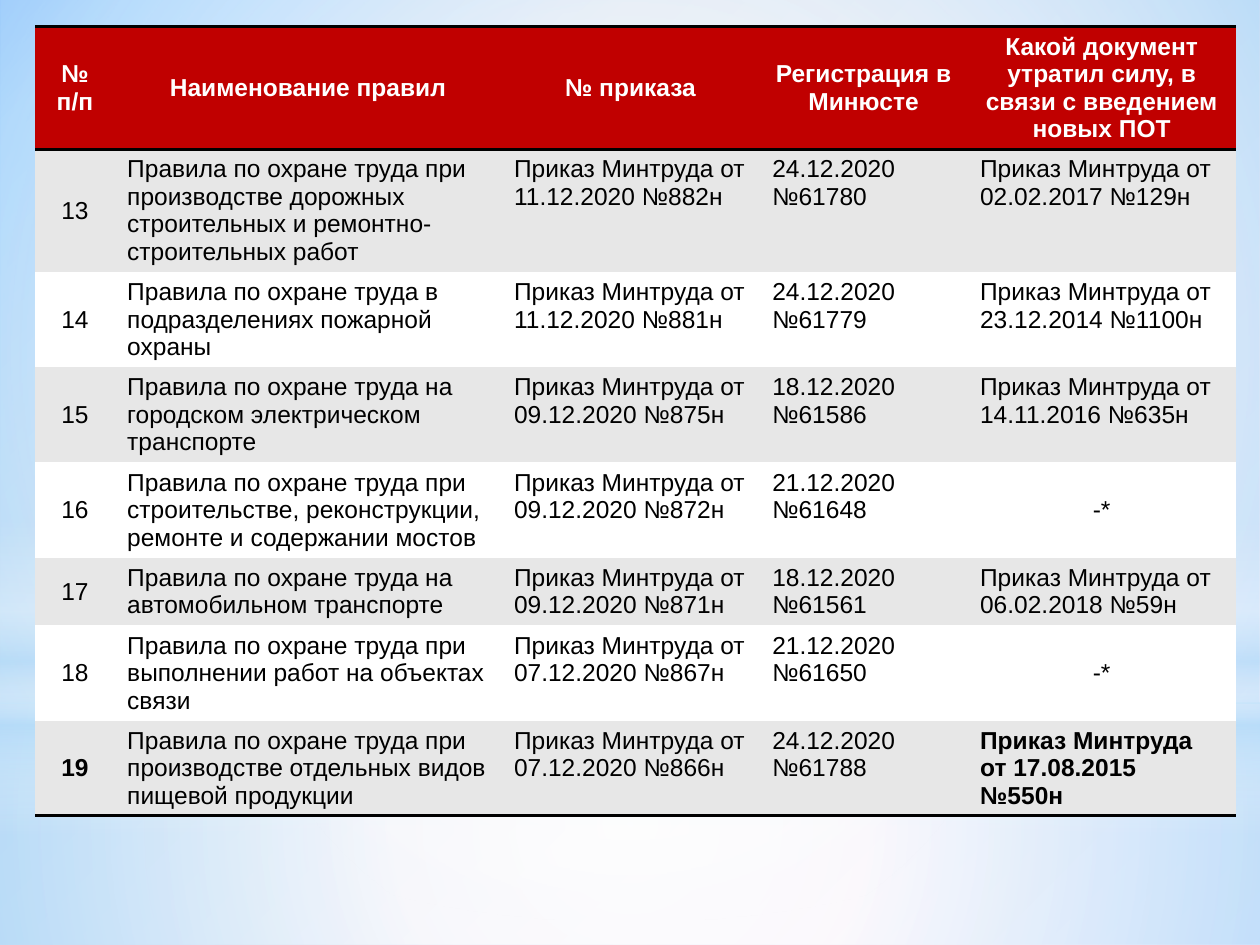
from lxml import etree
from pptx import Presentation
from pptx import util as u
from pptx.dml.color import RGBColor
from pptx.enum import shapes, text
from pptx.oxml import ns

WHITE = RGBColor(0xFF, 0xFF, 0xFF)
BLACK = RGBColor(0, 0, 0)
RED = RGBColor(0xC0, 0, 0)
GREY = RGBColor(0xE7, 0xE7, 0xE7)
SKY = RGBColor(0xB4, 0xDC, 0xFA)
BLUE = RGBColor(0x5E, 0x9E, 0xFF)
LIGHT_BLUE = RGBColor(0x85, 0xC2, 0xFF)
MIST = RGBColor(0xC4, 0xD6, 0xEB)
PINK = RGBColor(0xFF, 0xEB, 0xFA)

W, H = u.Inches(10), u.Inches(7.5)
FONT, SIZE = "Arial", u.Pt(14)
COLUMNS = [0.63, 3.07, 2.05, 1.65, 2.13]
ROW_HEIGHT = u.Inches(0.41)
NO_DOCUMENT = "-*"

HEADER = ["№ п/п", "Наименование правил", "№ приказа", "Регистрация в Минюсте",
          "Какой документ утратил силу, в связи с введением новых ПОТ"]
# Subject of the rules, order, registration, replaced order
RULES = [
    ("при производстве дорожных строительных и ремонтно-строительных работ",
     "11.12.2020 №882н", "24.12.2020 №61780", "02.02.2017 №129н"),
    ("в подразделениях пожарной охраны",
     "11.12.2020 №881н", "24.12.2020 №61779", "23.12.2014 №1100н"),
    ("на городском электрическом транспорте",
     "09.12.2020 №875н", "18.12.2020 №61586", "14.11.2016 №635н"),
    ("при строительстве, реконструкции, ремонте и содержании мостов",
     "09.12.2020 №872н", "21.12.2020 №61648", None),
    ("на автомобильном транспорте",
     "09.12.2020 №871н", "18.12.2020 №61561", "06.02.2018 №59н"),
    ("при выполнении работ на объектах связи",
     "07.12.2020 №867н", "21.12.2020 №61650", None),
    ("при производстве отдельных видов пищевой продукции",
     "07.12.2020 №866н", "24.12.2020 №61788", "17.08.2015 №550н"),
]
FIRST_NUMBER = 13


def sub(parent, tag, **attrs):
    return etree.SubElement(parent, ns.qn(tag), {k: str(v) for k, v in attrs.items()})


def set_gradient(fill, props, stops, angle=None):
    """Fill with (position %, colour, alpha %) stops; radial when angle is None."""
    fill.solid()
    solid = props.find(ns.qn("a:solidFill"))
    grad = etree.Element(ns.qn("a:gradFill"), rotWithShape="1")
    stop_list = sub(grad, "a:gsLst")
    for pos, color, alpha in stops:
        stop = sub(stop_list, "a:gs", pos=pos * 1000)
        sub(sub(stop, "a:srgbClr", val=color), "a:alpha", val=alpha * 1000)
    if angle is None:
        center = dict.fromkeys("ltrb", 50000)
        sub(sub(grad, "a:path", path="circle"), "a:fillToRect", **center)
    else:
        sub(grad, "a:lin", ang=angle * 60000, scaled=0)
    props.replace(solid, grad)


def add_glow(s, kind, top, height, stops, angle=None):
    """Full-width translucent layer; top and height are shares of the slide."""
    sp = s.shapes.add_shape(kind, 0, int(H * top), W, int(H * height))
    sp.shadow.inherit = False
    sp.line.fill.background()
    set_gradient(sp.fill, sp._element.spPr, stops, angle)


def add_backdrop(s):
    set_gradient(s.background.fill, s._element.cSld.bg.bgPr,
                 [(0, BLUE, 100), (6, LIGHT_BLUE, 100), (29, MIST, 100), (100, PINK, 100)], 45)
    rect, oval = shapes.MSO_SHAPE.RECTANGLE, shapes.MSO_SHAPE.OVAL
    horizon = 5.58 / 7.5
    add_glow(s, rect, horizon, 1 - horizon,
             [(0, WHITE, 91), (37, WHITE, 76), (100, SKY, 79)])
    add_glow(s, rect, 0, horizon,
             [(0, WHITE, 89), (48, WHITE, 62), (100, SKY, 79)])
    add_glow(s, rect, 0.55, 1 / 3,
             [(0, WHITE, 0), (29, WHITE, 30), (45, SKY, 40),
              (55, WHITE, 26), (65, SKY, 60), (100, WHITE, 0)], 90)
    add_glow(s, oval, 0.23, horizon, [(0, WHITE, 100), (56, WHITE, 0)])


def set_borders(cell, ruled):
    """Rule the sides named in ruled (of L, R, T, B) and clear the others."""
    props = cell._tc.get_or_add_tcPr()
    for i, side in enumerate("LRTB"):
        line = etree.Element(ns.qn(f"a:ln{side}"), w=str(u.Pt(2)))
        if side in ruled:
            sub(sub(line, "a:solidFill"), "a:srgbClr", val=BLACK)
        else:
            sub(line, "a:noFill")
        props.insert(i, line)


def fill_cell(cell, words, fill, color, centered, bold, ruled):
    cell.fill.solid()
    cell.fill.fore_color.rgb = fill
    set_borders(cell, ruled)
    p = cell.text_frame.paragraphs[0]
    if centered:
        cell.vertical_anchor = text.MSO_ANCHOR.MIDDLE
        p.alignment = text.PP_ALIGN.CENTER
    r = p.add_run()
    r.text = words
    r.font.name, r.font.size, r.font.bold = FONT, SIZE, bold
    r.font.color.rgb = color


def rule_row(number, rule):
    subject, order, registration, replaced = rule
    issued = "Приказ Минтруда от "
    return [str(number), f"Правила по охране труда {subject}", issued + order,
            registration, issued + replaced if replaced else NO_DOCUMENT]


def add_rules_table(s, left, top, width, height):
    rows = [HEADER] + [rule_row(n, rule) for n, rule in enumerate(RULES, FIRST_NUMBER)]
    last = len(rows) - 1
    frame = s.shapes.add_table(len(rows), len(COLUMNS), left, top, width, height)
    table = frame.table
    for column, share in zip(table.columns, COLUMNS):
        column.width = int(width * share / sum(COLUMNS))
    for i, row in enumerate(rows):
        table.rows[i].height = ROW_HEIGHT
        head = i == 0
        fill = RED if head else GREY if i % 2 else WHITE
        ruled = "TB" if head else "T" if i == 1 else "B" if i == last else ""
        for j, words in enumerate(row):
            centered = head or j == 0 or words == NO_DOCUMENT
            bold = head or (i == last and j in (0, len(row) - 1))
            fill_cell(table.cell(i, j), words, fill, WHITE if head else BLACK,
                      centered, bold, ruled)
    frame.height = height


def main():
    prs = Presentation()
    prs.slide_width, prs.slide_height = W, H
    s = prs.slides.add_slide(prs.slide_layouts[6])
    add_backdrop(s)
    add_rules_table(s, u.Inches(0.28), u.Inches(0.21), u.Inches(9.53), u.Inches(6.63))
    prs.save("out.pptx")


if __name__ == "__main__":
    main()
